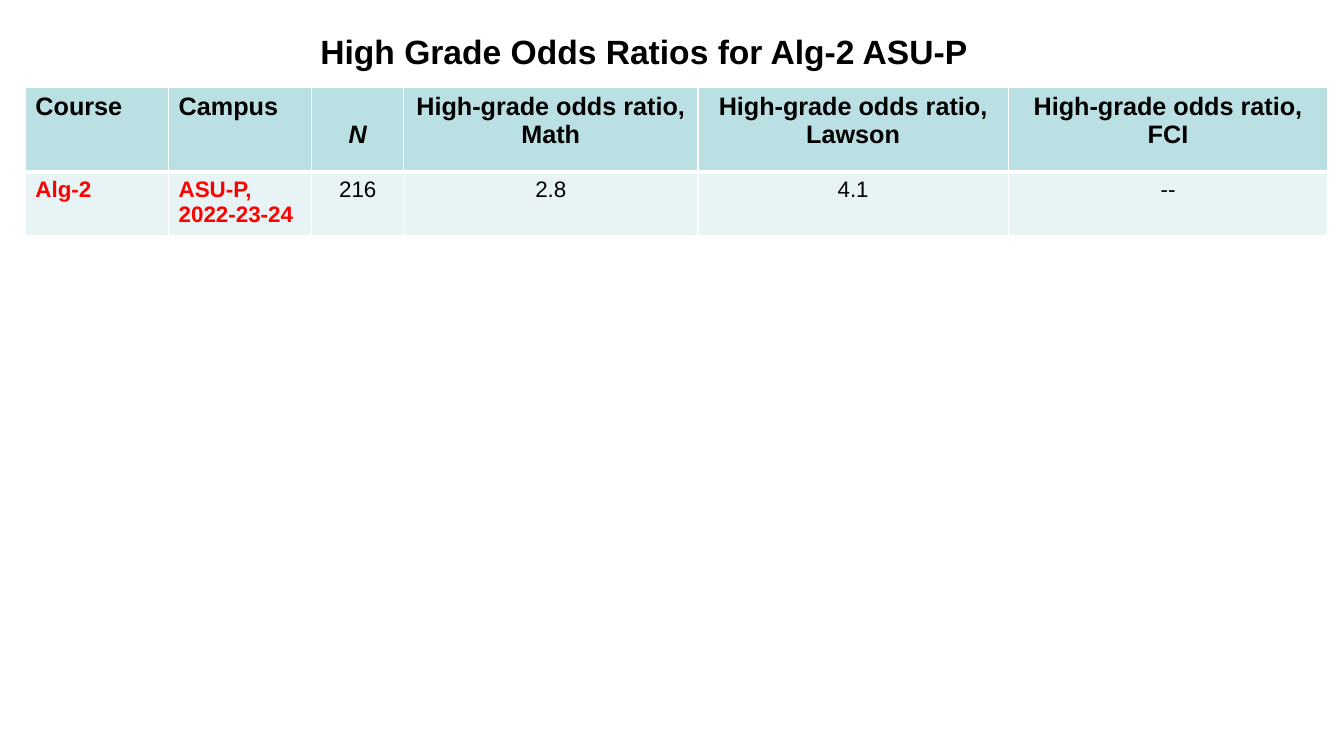
import lxml.etree
import pptx
import pptx.dml.color
import pptx.enum.text
import pptx.oxml.ns
import pptx.util

Cm = pptx.util.Cm
Pt = pptx.util.Pt
ALIGN = pptx.enum.text.PP_ALIGN

FONT = "Arial"
BLACK = "000000"
RED = "FF0000"
WHITE = "FFFFFF"
HEADER_FILL = "BBE0E3"
BODY_FILL = "E7F3F4"

COLUMN_WIDTHS = [3.61, 3.61, 2.31, 7.42, 7.82, 8.05]
ROW_HEIGHTS = [2.13, 1.6]
LABEL_COLUMNS = 2
HEADERS = [
    "Course",
    "Campus",
    "N",
    "High-grade odds ratio, Math",
    "High-grade odds ratio, Lawson",
    "High-grade odds ratio, FCI",
]
RESULTS = ["Alg-2", "ASU-P, 2022-23-24", "216", "2.8", "4.1", "--"]


def color(value):
    return pptx.dml.color.RGBColor.from_string(value)


def write_run(paragraph, text, size, font_color, bold=False, italic=False):
    run = paragraph.add_run()
    run.text = text
    run.font.name = FONT
    run.font.size = Pt(size)
    run.font.bold = bold
    run.font.italic = italic
    run.font.color.rgb = color(font_color)


def set_borders(cell, widths):
    properties = cell._tc.get_or_add_tcPr()
    for side, width in widths.items():
        line = lxml.etree.SubElement(
            properties, pptx.oxml.ns.qn("a:ln" + side), w=str(Pt(width))
        )
        fill = lxml.etree.SubElement(line, pptx.oxml.ns.qn("a:solidFill"))
        lxml.etree.SubElement(fill, pptx.oxml.ns.qn("a:srgbClr"), val=WHITE)


def fill_cell(cell, text, fill, borders, alignment, **text_format):
    set_borders(cell, borders)
    cell.fill.solid()
    cell.fill.fore_color.rgb = color(fill)
    paragraph = cell.text_frame.paragraphs[0]
    paragraph.alignment = alignment
    write_run(paragraph, text, **text_format)


def add_title(slide, text):
    title = slide.shapes.title
    title.left, title.top = Cm(7.82), Cm(0.64)
    title.width, title.height = Cm(21.39), Cm(1.27)
    frame = title.text_frame
    frame.word_wrap = True
    frame.auto_size = pptx.enum.text.MSO_AUTO_SIZE.NONE
    frame.vertical_anchor = pptx.enum.text.MSO_ANCHOR.TOP
    paragraph = frame.paragraphs[0]
    paragraph.alignment = ALIGN.LEFT
    write_run(paragraph, text, 24, BLACK, bold=True)


def add_odds_table(slide):
    table = slide.shapes.add_table(
        len(ROW_HEIGHTS), len(COLUMN_WIDTHS), Cm(0.64), Cm(2.21),
        Cm(sum(COLUMN_WIDTHS)), Cm(sum(ROW_HEIGHTS)),
    ).table
    for column, width in zip(table.columns, COLUMN_WIDTHS):
        column.width = Cm(width)
    for row, height in zip(table.rows, ROW_HEIGHTS):
        row.height = Cm(height)

    header_borders = {"L": 1, "R": 1, "T": 1, "B": 3}
    body_borders = {"L": 1, "R": 1, "T": 3, "B": 1}
    for index, (header, result) in enumerate(zip(HEADERS, RESULTS)):
        is_label = index < LABEL_COLUMNS
        alignment = ALIGN.LEFT if is_label else ALIGN.CENTER
        fill_cell(
            table.cell(0, index), header, HEADER_FILL, header_borders, alignment,
            size=18, font_color=BLACK, bold=True, italic=header == "N",
        )
        fill_cell(
            table.cell(1, index), result, BODY_FILL, body_borders, alignment,
            size=16, font_color=RED if is_label else BLACK, bold=is_label,
        )
    table.cell(0, HEADERS.index("N")).margin_top = Cm(0.84)


def main():
    presentation = pptx.Presentation()
    presentation.slide_width = Cm(33.87)
    presentation.slide_height = Cm(19.05)
    slide = presentation.slides.add_slide(presentation.slide_layouts[5])
    add_odds_table(slide)
    add_title(slide, "High Grade Odds Ratios for Alg-2 ASU-P")
    presentation.save("out.pptx")


if __name__ == "__main__":
    main()
